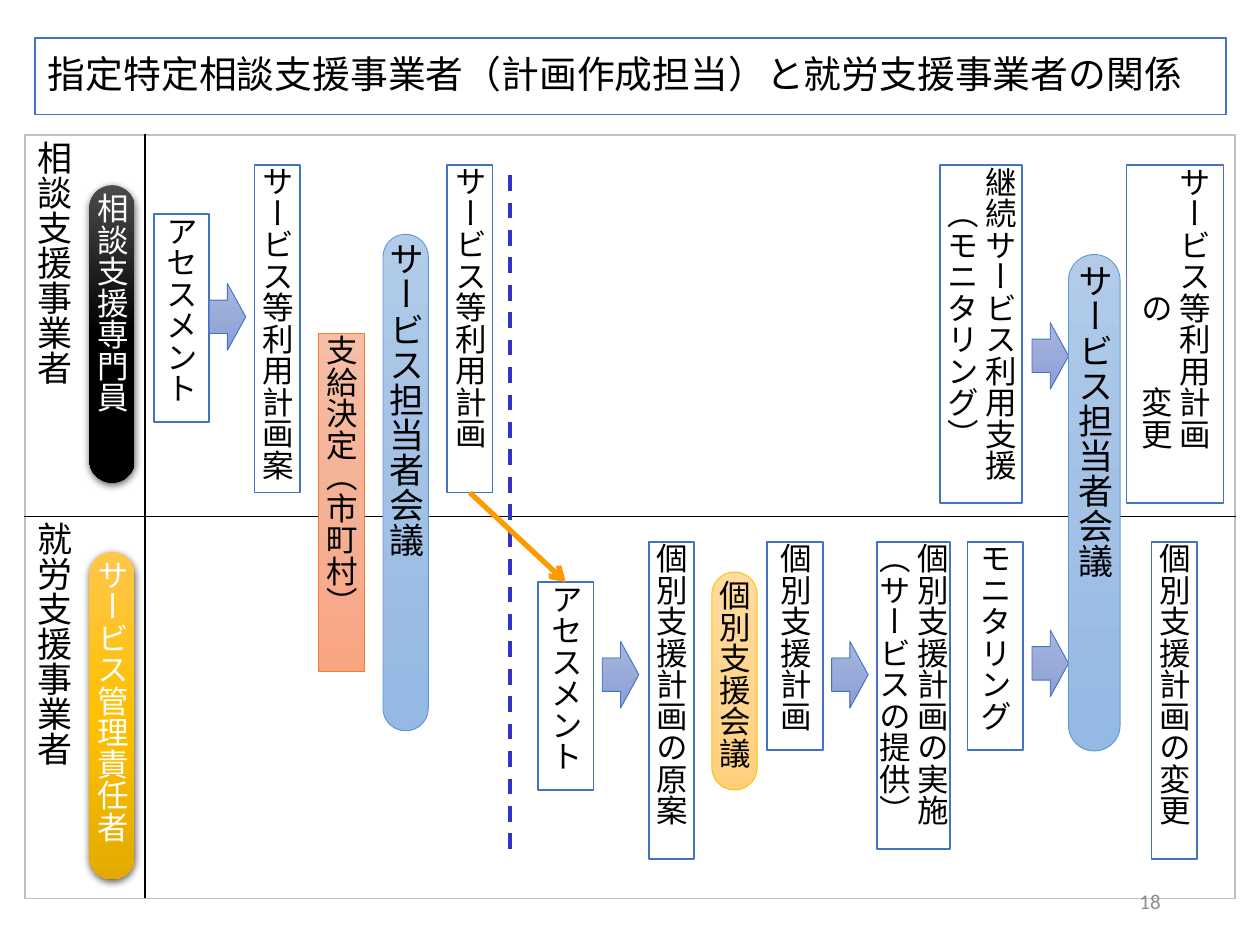
from copy import deepcopy

from lxml import etree
from pptx import Presentation
from pptx.dml.color import RGBColor
from pptx.enum.dml import MSO_LINE
from pptx.enum.shapes import MSO_CONNECTOR, MSO_SHAPE
from pptx.enum.text import MSO_ANCHOR, MSO_AUTO_SIZE, PP_ALIGN
from pptx.oxml import parse_xml
from pptx.oxml.ns import qn
from pptx.util import Inches, Pt

RECT, ROUND, ARROW = MSO_SHAPE.RECTANGLE, MSO_SHAPE.ROUNDED_RECTANGLE, MSO_SHAPE.RIGHT_ARROW
LEFT, CENTER, RIGHT = PP_ALIGN.LEFT, PP_ALIGN.CENTER, PP_ALIGN.RIGHT
TOP, MIDDLE = MSO_ANCHOR.TOP, MSO_ANCHOR.MIDDLE
STRAIGHT, DASH, NO_FIT = MSO_CONNECTOR.STRAIGHT, MSO_LINE.DASH, MSO_AUTO_SIZE.NONE
DRAWING = "http://schemas.openxmlformats.org/drawingml/2006/main"
FONT = "Noto Sans CJK JP"


def rgb(value):
    return RGBColor.from_string(value)


def write(frame, text, size=18, color="000000", align=CENTER, font=FONT):
    para = frame.paragraphs[0]
    para.alignment = align
    span = para.add_run()
    span.text = text
    span.font.size = Pt(size)
    span.font.name = font
    span.font.color.rgb = rgb(color)
    etree.SubElement(span.font._element, qn("a:ea"), typeface=font)
    return para


deck = Presentation()
deck.slide_width, deck.slide_height = Inches(10), Inches(7.5)
page = deck.slides.add_slide(deck.slide_layouts[5])

title = page.shapes.title
title.left, title.top, title.width, title.height = Inches(0.28), Inches(0.3), Inches(9.45), Inches(0.61)
title.fill.solid()
title.fill.fore_color.rgb = rgb("FFFFFF")
title.line.color.rgb = rgb("4472C4")
title.line.width = Pt(1)
title.text_frame.vertical_anchor = MIDDLE
title.text_frame.auto_size = NO_FIT
heading = write(title.text_frame, "指定特定相談支援事業者（計画作成担当）と就労支援事業者の関係", size=21.6, align=LEFT)
heading.line_spacing = 0.9

lanes = page.shapes.add_table(2, 2, Inches(0.2), Inches(1.07), Inches(9.6), Inches(6.06)).table
lanes.first_row = lanes.horz_banding = False
lanes.columns[0].width, lanes.columns[1].width = Inches(0.95), Inches(8.65)
for row, name in enumerate(["相談支援事業者", "就労支援事業者"]):
    lanes.rows[row].height = Inches(3.03)
    for column in range(2):
        cell = lanes.cell(row, column)
        properties = cell._tc.get_or_add_tcPr()
        outer = {"lnL": column == 0, "lnR": column == 1, "lnT": row == 0, "lnB": row == 1}
        for side, is_outer in outer.items():
            color = "BFBFBF" if is_outer else "000000"
            properties.append(parse_xml(
                f'<a:{side} xmlns:a="{DRAWING}" w="12700"><a:solidFill>'
                f'<a:srgbClr val="{color}"/></a:solidFill></a:{side}>'))
        cell.fill.background()
    label = lanes.cell(row, 0)
    label.vertical_anchor = TOP
    label.margin_left, label.margin_right = Inches(0.1), Inches(0.53)
    label.margin_top = label.margin_bottom = Inches(0.09)
    lane_name = write(label.text_frame, name, size=20, align=LEFT)
    lane_name.line_spacing = Pt(20)

WHITE = ["FFFFFF"]
BLUE = ["B1CBE9", "A3C1E5", "93B9E4"]
STEEL = ["A8B7DF", "9AABD9", "889ED7"]
ORANGE = ["F7BDA5", "F5B196", "F8A582"]
YELLOW = ["FFDB9E", "FFD590", "FFD07C"]
BLACK = ["4B4B4B", "000000", "000000"]
GOLD = ["FFC64B", "FFC000", "E3AB00"]

plain = [
    ("アセスメント", 1.22, 1.7, 0.44, 1.65),
    ("サービス等利用計画案", 2.02, 1.31, 0.36, 2.6),
    ("サービス等利用計画　", 3.55, 1.31, 0.36, 2.6),
    ("継続サービス利用支援（モニタリング）", 7.46, 1.31, 0.65, 2.68),
    ("サービス等利用計画の　　変更", 8.94, 1.31, 0.77, 2.68),
    ("アセスメント", 4.27, 4.62, 0.44, 1.65),
    ("個別支援計画の原案", 5.15, 4.3, 0.36, 2.52),
    ("個別支援計画", 6.09, 4.3, 0.44, 1.65),
    ("個別支援計画の実施（サービスの提供）", 6.96, 4.3, 0.58, 2.44),
    ("モニタリング", 7.68, 4.3, 0.44, 1.65),
    ("個別支援計画の変更", 9.14, 4.3, 0.36, 2.52),
]
arrows = [(1.66, 2.25), (4.78, 5.09), (6.6, 5.09), (8.19, 5), (8.19, 2.56)]
items = [(RECT, *step, WHITE, "4472C4") for step in plain]
items += [(ARROW, "", left, top, 0.29, 0.53, STEEL, "4472C4") for left, top in arrows]
items += [
    (RECT, "支給決定（市町村）", 2.53, 2.65, 0.36, 2.68, ORANGE, "ED7D31"),
    (ROUND, "サービス担当者会議", 3.04, 1.86, 0.36, 3.94, BLUE, "5B9BD5"),
    (ROUND, "サービス担当者会議", 8.48, 2.02, 0.41, 3.94, BLUE, "5B9BD5"),
    (ROUND, "個別支援会議", 5.65, 4.54, 0.36, 1.73, YELLOW, "FFC000"),
    (ROUND, "相談支援専門員", 0.71, 1.47, 0.36, 2.36, BLACK, None),
    (ROUND, "サービス管理責任者", 0.71, 4.38, 0.36, 2.6, GOLD, None),
]

boxes = []
for kind, text, left, top, width, height, colors, outline in items:
    box = page.shapes.add_shape(kind, Inches(left), Inches(top), Inches(width), Inches(height))
    boxes.append(box)
    box.shadow.inherit = False
    if kind == ROUND:
        box.adjustments[0] = 0.5
    if colors == WHITE:
        box.fill.solid()
        box.fill.fore_color.rgb = rgb(colors[0])
    else:
        box.fill.gradient()
        box.fill.gradient_angle = 270
        first_stop = box._element.xpath(".//a:gs")[0]
        first_stop.addnext(deepcopy(first_stop))
        for stop, color, position in zip(box.fill.gradient_stops, colors, (0, 0.5, 1)):
            stop.color.rgb = rgb(color)
            stop.position = position
    if outline:
        box.line.color.rgb = rgb(outline)
        box.line.width = Pt(1 if colors == WHITE else 0.5)
    else:
        box.line.fill.background()
        box._element.spPr.find(qn("a:effectLst")).append(parse_xml(
            f'<a:outerShdw xmlns:a="{DRAWING}" blurRad="57150" dist="19050" dir="5400000" '
            'algn="ctr" rotWithShape="0"><a:srgbClr val="000000"><a:alpha val="63000"/>'
            '</a:srgbClr></a:outerShdw>'))
    if text:
        frame = box.text_frame
        frame.margin_left = frame.margin_right = Inches(0.08)
        frame.margin_top = frame.margin_bottom = Inches(0.01)
        frame.vertical_anchor = MIDDLE
        frame.word_wrap = width > 0.5
        frame._txBody.bodyPr.set("vert", "eaVert")
        write(frame, text, size=20 if colors == BLUE else 18,
              color="000000" if outline else "FFFFFF",
              align=RIGHT if text.endswith("　変更") else CENTER)

service_plan, assessment = boxes[2], boxes[5]
divider = page.shapes.add_connector(STRAIGHT, Inches(4.05), Inches(1.39), Inches(4.05), Inches(6.82))
handover = page.shapes.add_connector(STRAIGHT, Inches(3.73), Inches(3.91), Inches(4.49), Inches(4.62))
handover.begin_connect(service_plan, 2)
handover.end_connect(assessment, 0)
for connector, color, weight in [(divider, "3333CC", 2.25), (handover, "FF9900", 3)]:
    connector.line.color.rgb = rgb(color)
    connector.line.width = Pt(weight)
    etree.SubElement(connector._element.spPr, qn("a:effectLst"))
divider.line.dash_style = DASH
etree.SubElement(handover.line._get_or_add_ln(), qn("a:tailEnd"), type="arrow")

number = page.shapes.add_textbox(Inches(7.06), Inches(6.95), Inches(2.25), Inches(0.4))
number.text_frame.word_wrap = True
number.text_frame.vertical_anchor = MIDDLE
write(number.text_frame, "18", size=12, color="8C8C8C", align=RIGHT, font="Calibri")

deck.save("out.pptx")
